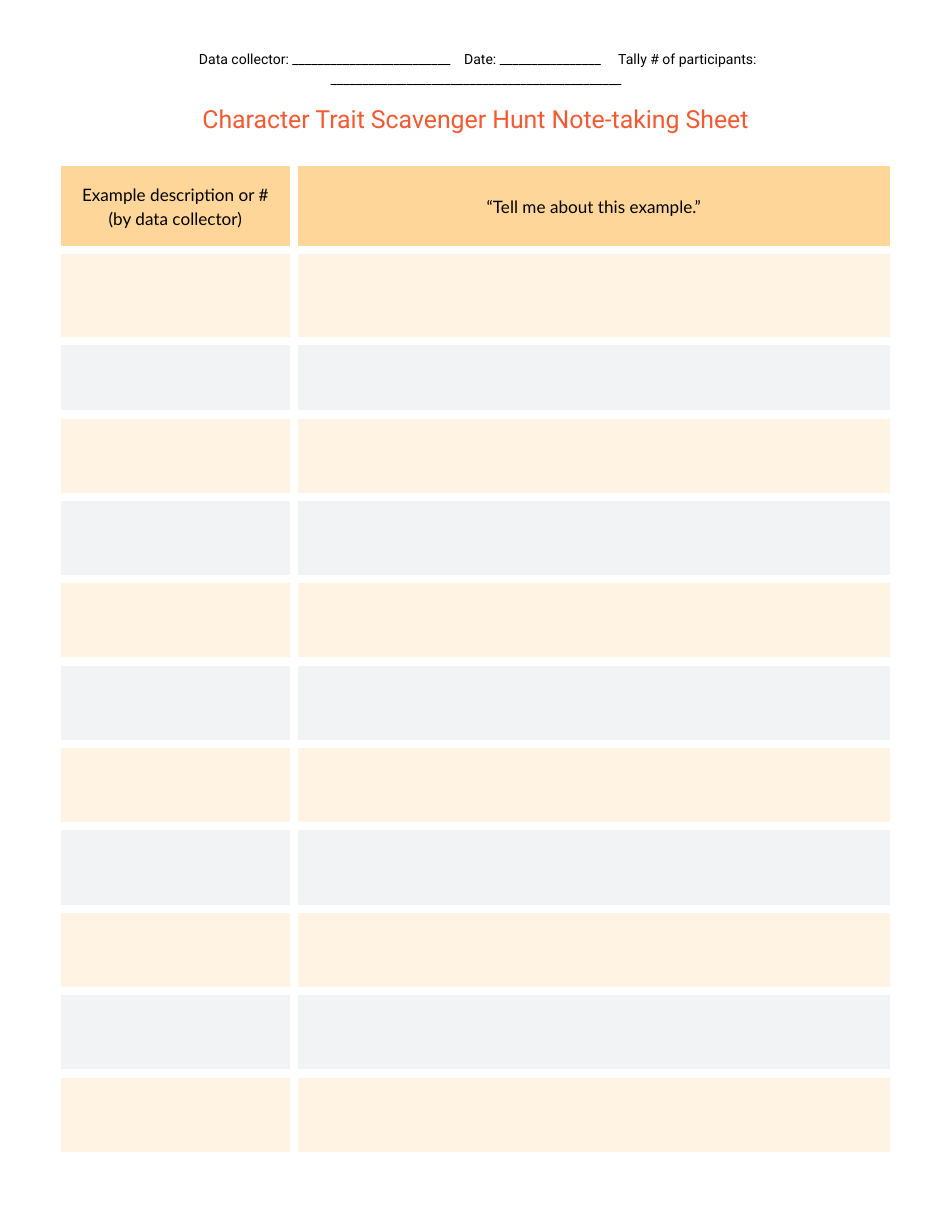
from dataclasses import dataclass
from typing import NamedTuple

from lxml.etree import SubElement
from pptx import Presentation
from pptx.dml.color import RGBColor
from pptx.enum.text import MSO_ANCHOR, MSO_AUTO_SIZE, PP_ALIGN
from pptx.oxml.ns import qn
from pptx.util import Inches, Pt


@dataclass(frozen=True)
class Theme:
    title: str = "F15A32"
    ink: str = "000000"
    header: str = "FFD699"
    bands: tuple[str, str] = ("FFF4E3", "F2F3F5")
    border: str = "FFFFFF"
    border_pt: float = 6
    title_pt: float = 16
    header_pt: float = 11
    form_pt: float = 9
    leading: float = 1.4
    title_font: str = "Roboto"
    table_font: str = "Lato"


class Box(NamedTuple):
    """Place and size in percent of the slide."""
    x: float
    y: float
    w: float
    h: float


class Field(NamedTuple):
    """A label, the length of its blank, and the extra gap before it in points."""
    label: str
    blank: int
    gap: float


THEME = Theme()
WIDTH, HEIGHT = Inches(8.5), Inches(11)

FORM_BOX = Box(5.4, 3.9, 89.2, 1.64)
TITLE_BOX = Box(5.97, 8, 88, 2.64)
TABLE_BOX = Box(6, 13.1, 87.95, 80.75)

FIELDS = (Field("Data collector:", 25, 0),
          Field("Date:", 16, 6.7),
          Field("Tally # of participants:", 46, 8.9))
HEADERS = ("Example description or # (by data collector)",
           "“Tell me about this example.”")

# Shares of the table in percent: header, two uneven rows, then equal rows
COLUMNS = (28.25, 71.75)
LEADING_ROWS = (8.9, 9.15, 7.4)
EQUAL_ROWS = 9
ROWS = LEADING_ROWS + ((100 - sum(LEADING_ROWS)) / EQUAL_ROWS,) * EQUAL_ROWS


def to_emu(box: Box) -> tuple[int, int, int, int]:
    return tuple(round(share * side / 100)
                 for share, side in zip(box, (WIDTH, HEIGHT) * 2))


def write(tf, text: str, *, size: float, font: str, color: str,
          tracking: float = 0) -> None:
    """Append a run to the frame's paragraph; tracking is in points."""
    p = tf.paragraphs[0]
    p.alignment = PP_ALIGN.CENTER
    p.line_spacing = Pt(size * THEME.leading)
    r = p.add_run()
    r.text = text
    r.font.size = Pt(size)
    r.font.name = font
    r.font.color.rgb = RGBColor.from_string(color)
    if tracking:
        r.font._element.set("spc", str(round(tracking * 100)))


def fit_frame(tf) -> None:
    """Wrap the text from the top of a frame without margins."""
    tf.word_wrap = True
    tf.auto_size = MSO_AUTO_SIZE.SHAPE_TO_FIT_TEXT
    tf.vertical_anchor = MSO_ANCHOR.TOP
    tf.margin_left = tf.margin_right = tf.margin_top = tf.margin_bottom = 0


def style_cell(cell, fill: str) -> None:
    # Borders must come before the fill in the cell's properties
    tc_pr = cell._tc.get_or_add_tcPr()
    for side in "LRTB":
        line = SubElement(tc_pr, qn(f"a:ln{side}"), w=str(Pt(THEME.border_pt)))
        solid = SubElement(line, qn("a:solidFill"))
        SubElement(solid, qn("a:srgbClr"), val=THEME.border)
    cell.fill.solid()
    cell.fill.fore_color.rgb = RGBColor.from_string(fill)


def add_title(s, box: Box) -> None:
    sp = s.shapes.title
    sp.left, sp.top, sp.width, sp.height = to_emu(box)
    fit_frame(sp.text_frame)
    write(sp.text_frame, "Character Trait Scavenger Hunt Note-taking Sheet",
          size=THEME.title_pt, font=THEME.title_font, color=THEME.title)


def add_form_line(s, box: Box, fields: tuple[Field, ...]) -> None:
    tf = s.shapes.add_textbox(*to_emu(box)).text_frame
    fit_frame(tf)
    style = dict(size=THEME.form_pt, font=THEME.title_font, color=THEME.ink)
    for field in fields:
        write(tf, " ", tracking=field.gap, **style)
        write(tf, f"{field.label} {'_' * field.blank}", **style)


def add_note_table(s, box: Box) -> None:
    x, y, w, h = to_emu(box)
    table = s.shapes.add_table(len(ROWS), len(COLUMNS), x, y, w, h).table
    table.first_row = table.horz_banding = False
    for column, share in zip(table.columns, COLUMNS):
        column.width = round(w * share / 100)
    for i, (row, share) in enumerate(zip(table.rows, ROWS)):
        row.height = round(h * share / 100)
        fill = THEME.bands[(i - 1) % 2] if i else THEME.header
        for cell in row.cells:
            style_cell(cell, fill)
    for cell, text in zip(table.rows[0].cells, HEADERS):
        cell.vertical_anchor = MSO_ANCHOR.MIDDLE
        cell.margin_left = cell.margin_right = Inches(0.11)
        cell.margin_top = cell.margin_bottom = Inches(0.11)
        write(cell.text_frame, text, size=THEME.header_pt,
              font=THEME.table_font, color=THEME.ink)


def main() -> None:
    prs = Presentation()
    prs.slide_width, prs.slide_height = WIDTH, HEIGHT
    s = prs.slides.add_slide(prs.slide_layouts.get_by_name("Title Only"))
    add_note_table(s, TABLE_BOX)
    add_title(s, TITLE_BOX)
    add_form_line(s, FORM_BOX, FIELDS)
    prs.save("out.pptx")


if __name__ == "__main__":
    main()
